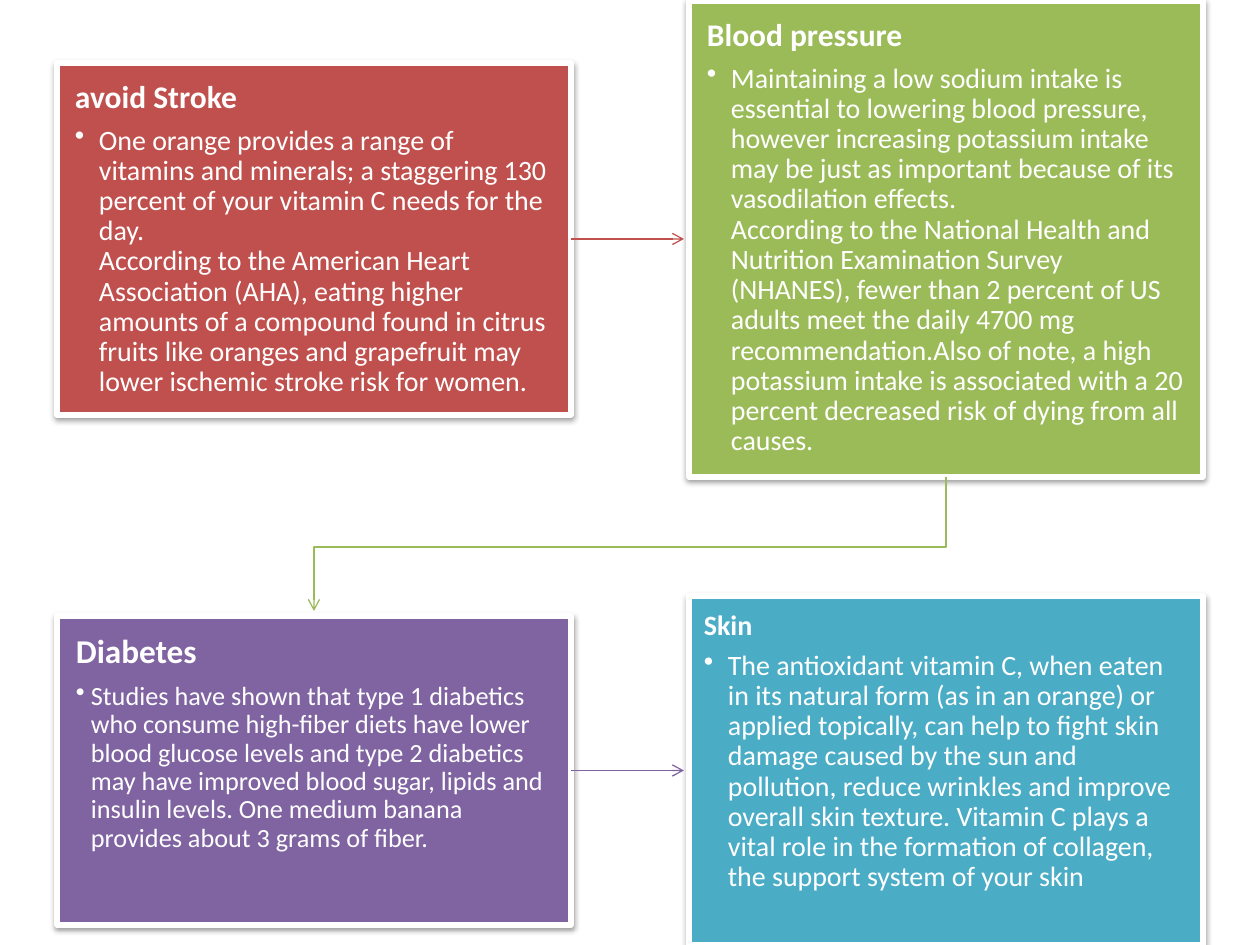
from dataclasses import dataclass

from lxml.etree import SubElement
from pptx import Presentation
from pptx.dml.color import RGBColor
from pptx.enum.shapes import MSO_CONNECTOR as Connector, MSO_SHAPE as Shape
from pptx.enum.text import MSO_ANCHOR as Anchor, PP_ALIGN as Align
from pptx.oxml.ns import qn
from pptx.util import Emu, Pt

SCALE = 914400 / 126  # EMU per px


@dataclass(frozen=True)
class Theme:
    font: str = "Calibri"
    text: str = "FFFFFF"
    border: str = "FFFFFF"
    shadow: str = "000000"
    red: str = "C0504D"
    green: str = "9BBB59"
    purple: str = "8064A2"
    blue: str = "4BACC6"
    large: int = 19
    heading: int = 18
    body: int = 16
    small: int = 15
    border_width: float = 3
    arrow_width: float = 0.75


THEME = Theme()


@dataclass(frozen=True)
class Card:
    box: tuple
    color: str
    heading: str
    body: tuple  # lines parted by line breaks
    heading_size: int = THEME.heading
    body_size: int = THEME.body
    inset: int = 18
    indent: int = 24


STROKE = Card(
    (57, 63, 514, 352), THEME.red, "avoid Stroke",
    ("One orange provides a range of vitamins and minerals; a staggering 130 "
     "percent of your vitamin C needs for the day.",
     "According to the American Heart Association (AHA), eating higher amounts "
     "of a compound found in citrus fruits like oranges and grapefruit may "
     "lower ischemic stroke risk for women."))
PRESSURE = Card(
    (689, 1, 514, 476), THEME.green, "Blood pressure",
    ("Maintaining a low sodium intake is essential to lowering blood pressure, "
     "however increasing potassium intake may be just as important because of "
     "its vasodilation effects.",
     "According to the National Health and Nutrition Examination Survey "
     "(NHANES), fewer than 2 percent of US adults meet the daily 4700 mg "
     "recommendation.Also of note, a high potassium intake is associated with "
     "a 20 percent decreased risk of dying from all causes."))
DIABETES = Card(
    (57, 616, 514, 309), THEME.purple, "Diabetes",
    ("Studies have shown that type 1 diabetics who consume high-fiber diets "
     "have lower blood glucose levels and type 2 diabetics may have improved "
     "blood sugar, lipids and insulin levels. One medium banana provides "
     "about 3 grams of fiber.",),
    heading_size=THEME.large, body_size=THEME.small, inset=19, indent=15)
SKIN = Card(
    (689, 596, 514, 349), THEME.blue, "Skin",
    ("The antioxidant vitamin C, when eaten in its natural form (as in an "
     "orange) or applied topically, can help to fight skin damage caused by "
     "the sun and pollution, reduce wrinkles and improve overall skin texture. "
     "Vitamin C plays a vital role in the formation of collagen, the support "
     "system of your skin",),
    heading_size=THEME.body, inset=15)


def px(length):
    return Emu(round(length * SCALE))


def rgb(color):
    return RGBColor.from_string(color)


def add_run(paragraph, text, size, bold):
    run = paragraph.add_run()
    run.text = text
    font = run.font
    font.name, font.size, font.bold = THEME.font, Pt(size), bold
    font.color.rgb = rgb(THEME.text)


def format_paragraph(paragraph, space_after):
    paragraph.alignment = Align.LEFT
    paragraph.line_spacing = 0.9
    paragraph.space_after = Pt(round(space_after, 2))


def add_bullet(paragraph, indent):
    paragraph.level = 1
    properties = paragraph._p.get_or_add_pPr()
    properties.set("marL", str(px(indent)))
    properties.set("indent", str(-px(indent)))
    SubElement(properties, qn("a:buChar"), char="•")


def add_soft_shadow(panel):
    panel.shadow.inherit = False
    effects = panel.element.spPr.find(qn("a:effectLst"))
    shadow = SubElement(effects, qn("a:outerShdw"), blurRad="40000", dist="20000",
                        dir="5400000", rotWithShape="0")
    color = SubElement(shadow, qn("a:srgbClr"), val=THEME.shadow)
    SubElement(color, qn("a:alpha"), val="38000")


def add_card(slide, card):
    panel = slide.shapes.add_shape(Shape.RECTANGLE, *map(px, card.box))
    panel.fill.solid()
    panel.fill.fore_color.rgb = rgb(card.color)
    panel.line.color.rgb = rgb(THEME.border)
    panel.line.width = Pt(THEME.border_width)
    add_soft_shadow(panel)

    frame = panel.text_frame
    frame.word_wrap = True
    frame.vertical_anchor = Anchor.TOP
    frame.margin_left = frame.margin_right = px(card.inset)
    frame.margin_top = frame.margin_bottom = px(card.inset)

    heading = frame.paragraphs[0]
    format_paragraph(heading, 0.35 * card.heading_size)
    add_run(heading, card.heading, card.heading_size, True)

    body = frame.add_paragraph()
    format_paragraph(body, 0.15 * card.body_size)
    add_bullet(body, card.indent)
    for number, line in enumerate(card.body):
        if number:
            body.add_line_break()
        add_run(body, line, card.body_size, False)
    return panel


def style_arrow(arrow, color):
    arrow.line.color.rgb = rgb(color)
    arrow.line.width = Pt(THEME.arrow_width)
    SubElement(arrow.element.spPr.find(qn("a:ln")), qn("a:tailEnd"), type="arrow")


def add_side_arrow(slide, panel, card, end_x):
    left, top, width, height = card.box
    middle = px(top + height / 2)
    arrow = slide.shapes.add_connector(
        Connector.STRAIGHT, px(left + width), middle, px(end_x), middle)
    arrow.begin_connect(panel, 3)
    style_arrow(arrow, card.color)
    SubElement(arrow.element.spPr, qn("a:effectLst"))


def add_bent_arrow(slide, points, color):
    builder = slide.shapes.build_freeform(*points[0], scale=SCALE)
    builder.add_line_segments(points[1:], close=False)
    arrow = builder.convert_to_shape()
    arrow.fill.background()
    style_arrow(arrow, color)
    arrow.shadow.inherit = False


def main():
    deck = Presentation()
    deck.slide_width, deck.slide_height = px(1260), px(945)
    slide = deck.slides.add_slide(deck.slide_layouts[6])

    # Cards, each row with an arrow from left to right
    for left_card, right_card in ((STROKE, PRESSURE), (DIABETES, SKIN)):
        left_panel = add_card(slide, left_card)
        add_card(slide, right_card)
        add_side_arrow(slide, left_panel, left_card, end_x=684)

    # Arrow from the first row down to the second
    add_bent_arrow(slide, [(946, 477), (946, 547), (314, 547), (314, 611)],
                   THEME.green)

    deck.save("out.pptx")


if __name__ == "__main__":
    main()
